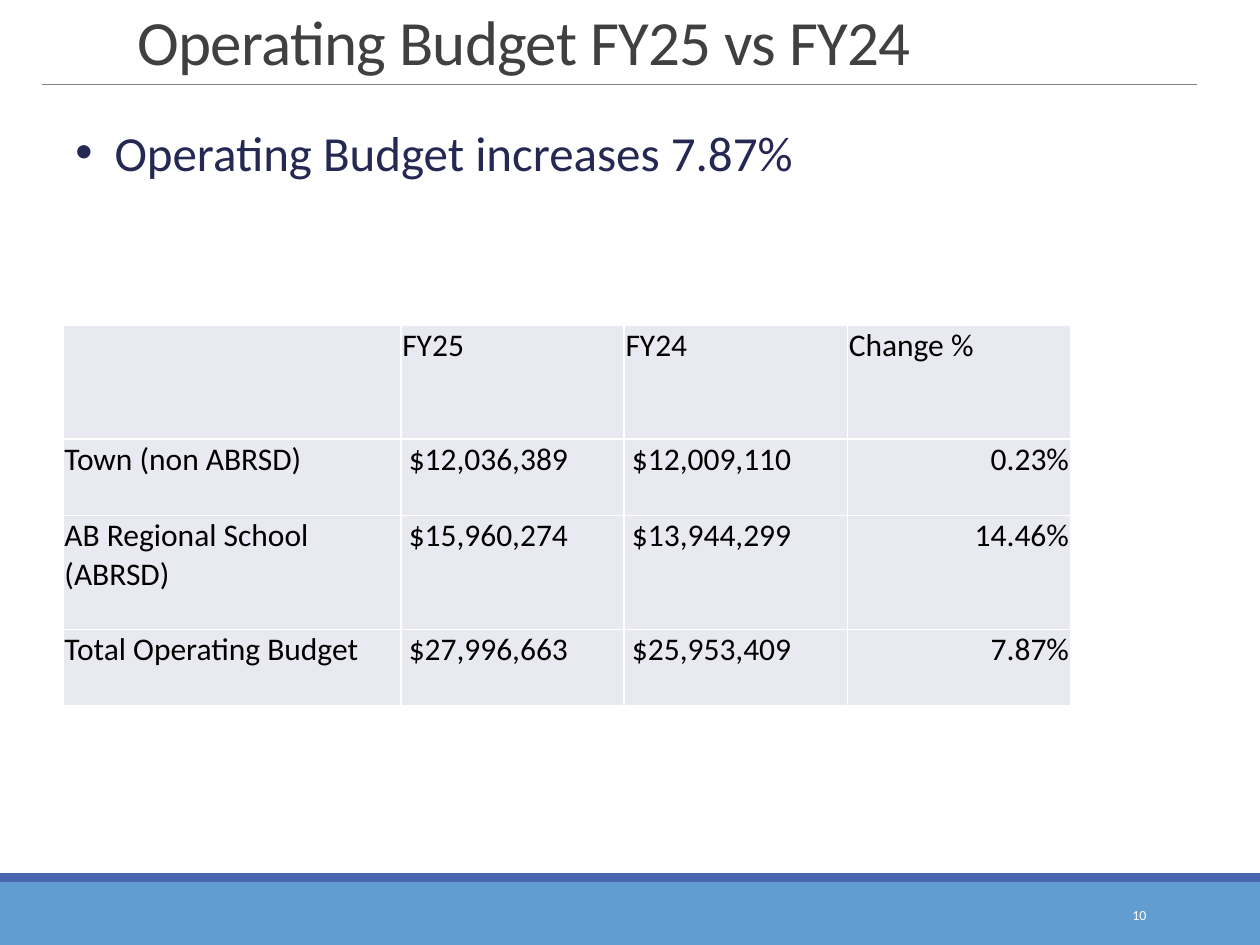
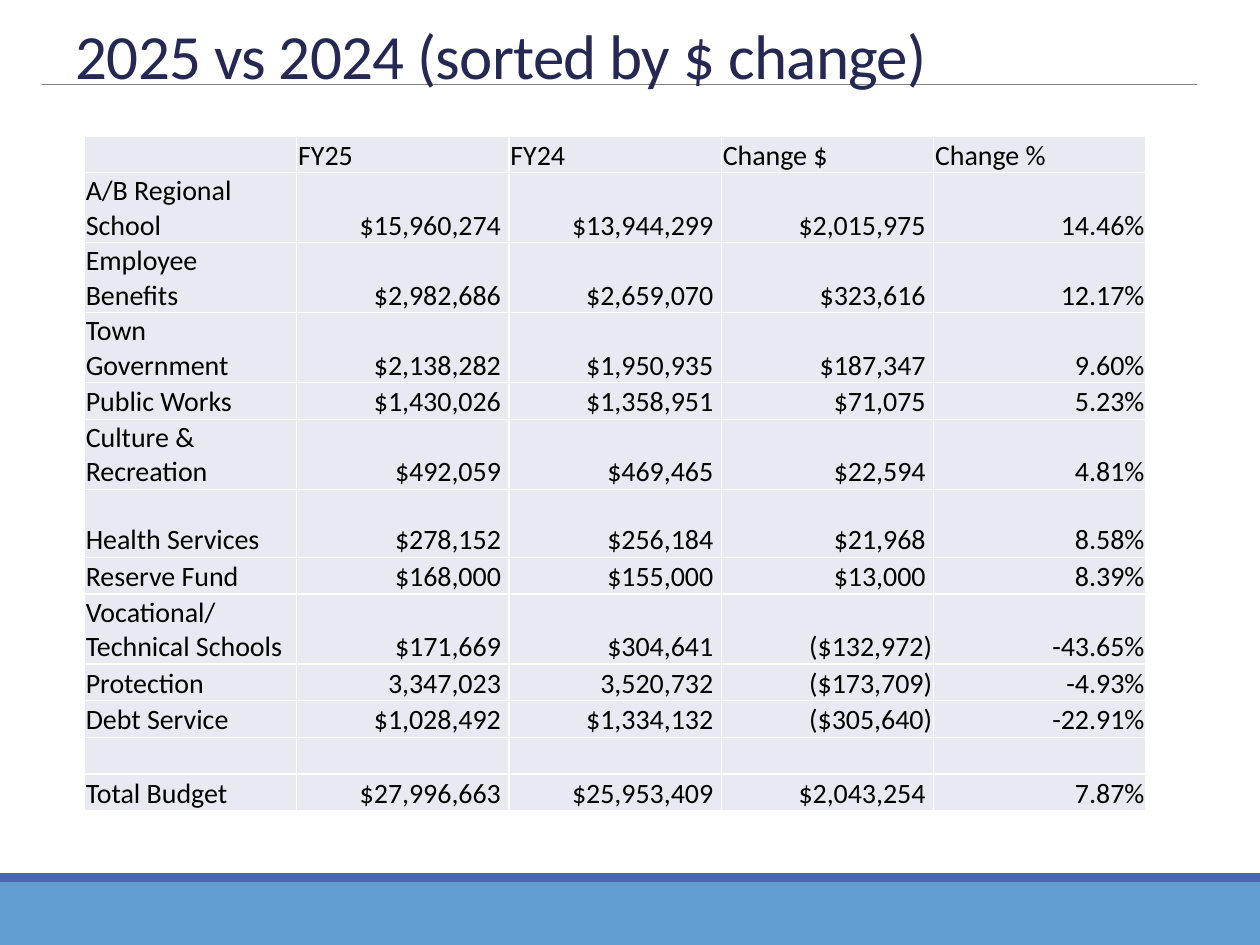
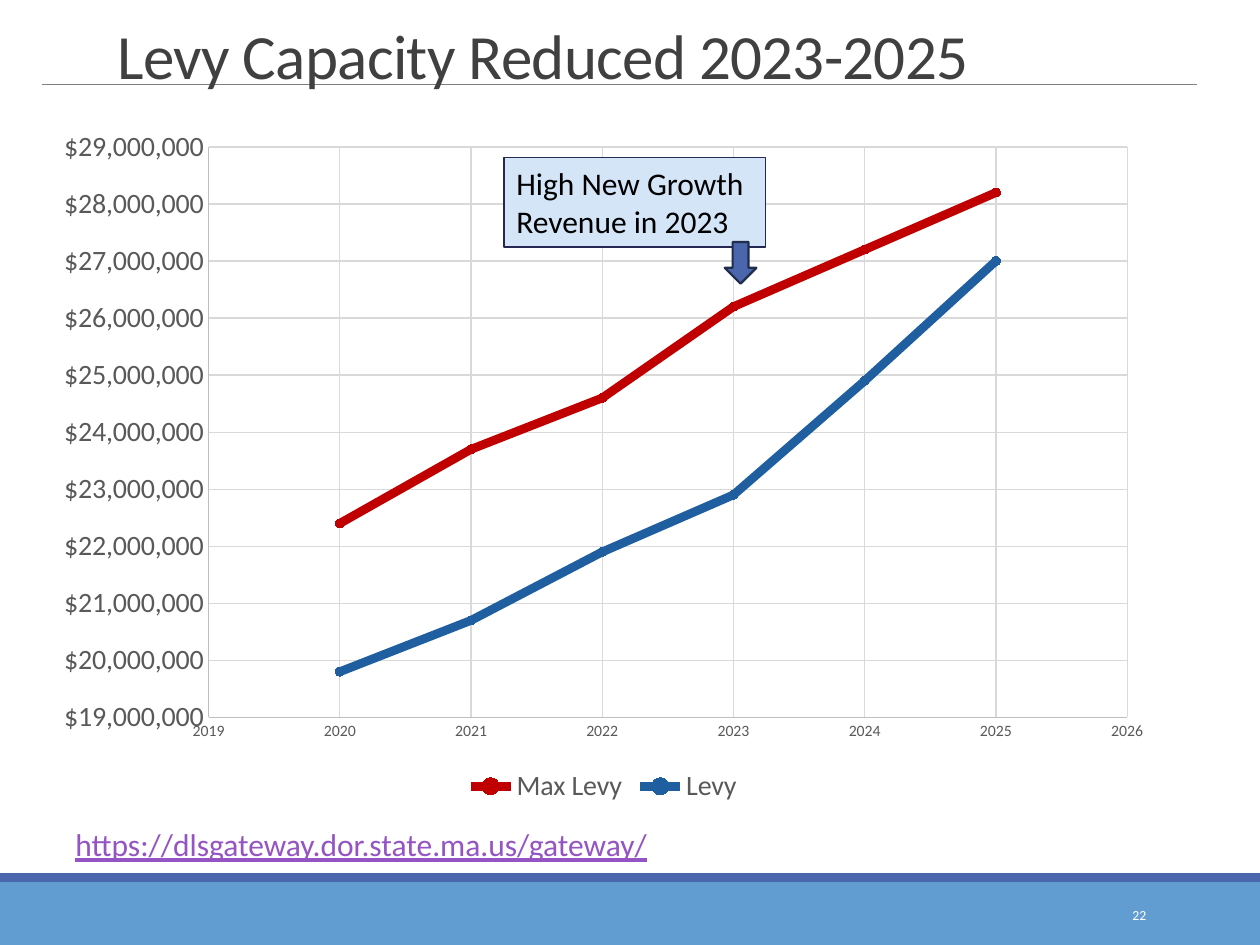
from lxml.etree import SubElement
from pptx import Presentation
from pptx.chart.data import XyChartData
from pptx.dml.color import RGBColor
from pptx.enum.chart import XL_CHART_TYPE, XL_LEGEND_POSITION, XL_MARKER_STYLE, XL_TICK_MARK
from pptx.enum.shapes import MSO_CONNECTOR, MSO_SHAPE
from pptx.enum.text import MSO_ANCHOR, PP_ALIGN
from pptx.oxml.ns import qn
from pptx.util import Cm, Pt

FONT = "Calibri"
NAVY, DARK_GRAY, TEXT_GRAY = "242852", "404040", "595959"
BLACK, WHITE = "000000", "FFFFFF"
LIGHT_BLUE, BLUE, CELL_FILL = "629DD1", "4A66AC", "E9EAF1"
AXIS_GRAY, GRID_GRAY = "BFBFBF", "D9D9D9"

# Places are left, top, width and height in centimetres.
BANDS = [((0, 17.78, 25.4, 1.27), LIGHT_BLUE), ((0, 17.6, 25.4, 0.18), BLUE)]
TITLE_RULE = (0.84, 1.7, 24.13, 1.7)
NUMBER_PLACE = (20.62, 17.93, 2.74, 1.02)

SLIDES = [
    {"title": "Operating Budget FY25 vs FY24", "place": (2.51, 0.15, 20.96, 1.52),
     "color": DARK_GRAY, "number": "10"},
    {"title": "2025 vs 2024 (sorted by $ change)", "place": (1.27, 0.43, 20.96, 1.75),
     "color": NAVY, "number": None},
    {"title": "Levy Capacity Reduced 2023-2025", "place": (2.11, 0.43, 20.96, 1.75),
     "color": DARK_GRAY, "number": "22"},
]

OPERATING_ROWS = [
    ("", "FY25", "FY24", "Change %"),
    ("Town (non ABRSD)", "$12,036,389", "$12,009,110", "0.23%"),
    ("AB Regional School (ABRSD)", "$15,960,274", "$13,944,299", "14.46%"),
    ("Total Operating Budget", "$27,996,663", "$25,953,409", "7.87%"),
]
OPERATING_FORMAT = {
    "left": 1.27, "top": 6.55, "widths": [6.81, 4.5, 4.5, 4.5],
    "heights": [2.3, 1.54, 2.3, 1.54], "size": 18, "anchor": MSO_ANCHOR.TOP,
    "amount_align": PP_ALIGN.LEFT,
}

DEPARTMENT_ROWS = [
    ("", "FY25", "FY24", "Change $", "Change %"),
    ("A/B Regional School", "$15,960,274", "$13,944,299", "$2,015,975", "14.46%"),
    ("Employee Benefits", "$2,982,686", "$2,659,070", "$323,616", "12.17%"),
    ("Town Government", "$2,138,282", "$1,950,935", "$187,347", "9.60%"),
    ("Public Works", "$1,430,026", "$1,358,951", "$71,075", "5.23%"),
    ("Culture & Recreation", "$492,059", "$469,465", "$22,594", "4.81%"),
    ("Health Services", "$278,152", "$256,184", "$21,968", "8.58%"),
    ("Reserve Fund", "$168,000", "$155,000", "$13,000", "8.39%"),
    ("Vocational/Technical Schools", "$171,669", "$304,641", "($132,972)", "-43.65%"),
    ("Protection", "3,347,023", "3,520,732", "($173,709)", "-4.93%"),
    ("Debt Service", "$1,028,492", "$1,334,132", "($305,640)", "-22.91%"),
    ("", "", "", "", ""),
    ("Total Budget", "$27,996,663", "$25,953,409", "$2,043,254", "7.87%"),
]
TALL_ROWS = {1, 2, 3, 5, 6, 8}
DEPARTMENT_FORMAT = {
    "left": 1.7, "top": 2.74, "widths": [4.28] * 5,
    "heights": [1.37 if row in TALL_ROWS else 0.74 for row in range(len(DEPARTMENT_ROWS))],
    "size": 16, "anchor": MSO_ANCHOR.BOTTOM, "amount_align": PP_ALIGN.RIGHT,
}

YEARS = range(2020, 2026)
LEVIES = [
    ("Max Levy", "C00000", [22400000, 23700000, 24600000, 26200000, 27200000, 28200000]),
    ("Levy", "1F5FA0", [19800000, 20700000, 21900000, 22900000, 24900000, 27000000]),
]
YEAR_AXIS = {"minimum_scale": 2019, "maximum_scale": 2026, "major_unit": 1}
LEVY_AXIS = {"minimum_scale": 19000000, "maximum_scale": 29000000, "major_unit": 1000000}


def color(value):
    return RGBColor.from_string(value)


def lengths(values):
    return [Cm(value) for value in values]


def set_font(font, size, fill, **extras):
    for name, value in {"name": FONT, "size": Pt(size), **extras}.items():
        setattr(font, name, value)
    font.color.rgb = color(fill)


def set_line(line, fill, width):
    line.color.rgb = color(fill)
    line.width = Pt(width)


def write(frame, text, size, fill, align=PP_ALIGN.LEFT, anchor=MSO_ANCHOR.TOP, **extras):
    frame.word_wrap = True
    frame.vertical_anchor = anchor
    paragraph = frame.paragraphs[0]
    paragraph.alignment = align
    run = paragraph.add_run()
    run.text = text
    set_font(run.font, size, fill, **extras)
    return paragraph


def add_text(slide, place, text, size, fill, **options):
    box = slide.shapes.add_textbox(*lengths(place))
    return write(box.text_frame, text, size, fill, **options)


def add_filled_shape(slide, kind, place, fill, line=None):
    shape = slide.shapes.add_shape(kind, *lengths(place))
    shape.shadow.inherit = False
    shape.fill.solid()
    shape.fill.fore_color.rgb = color(fill)
    if line:
        set_line(shape.line, *line)
    else:
        shape.line.fill.background()
    return shape


def move_shared_parts_to_layout(slide, layout):
    """Draw the bands and the title rule, then hand them to the layout."""
    for placeholder in list(layout.placeholders):
        if placeholder.placeholder_format.idx >= 10:
            layout.shapes.element.remove(placeholder.element)
    parts = [add_filled_shape(slide, MSO_SHAPE.RECTANGLE, place, fill) for place, fill in BANDS]
    rule = slide.shapes.add_connector(MSO_CONNECTOR.STRAIGHT, *lengths(TITLE_RULE))
    set_line(rule.line, "808080", 0.5)
    SubElement(rule.element.spPr, qn("a:effectLst"))
    for part in parts + [rule]:
        layout.shapes.element.append(part.element)


def add_title(slide, content):
    title = slide.shapes.title
    for name, value in zip(("left", "top", "width", "height"), lengths(content["place"])):
        setattr(title, name, value)
    paragraph = write(title.text_frame, content["title"], 36, content["color"])
    paragraph.line_spacing = 0.85
    paragraph.runs[0].font._element.set("spc", "-40")


def add_number(slide, number):
    add_text(slide, NUMBER_PLACE, number, 7.9, WHITE,
             align=PP_ALIGN.RIGHT, anchor=MSO_ANCHOR.MIDDLE)


def add_cell_borders(cell):
    properties = cell._tc.get_or_add_tcPr()
    for side in ("lnL", "lnR", "lnT", "lnB"):
        border = SubElement(properties, qn(f"a:{side}"), w=str(Pt(1)))
        fill = SubElement(border, qn("a:solidFill"))
        SubElement(fill, qn("a:srgbClr"), val=WHITE)


def fill_cell(cell, text, align, padded, layout):
    """Format one cell; padded amounts keep a small gap at their aligned side."""
    margins = {"margin_left": 0.03, "margin_right": 0.03, "margin_top": 0.03, "margin_bottom": 0}
    if padded:
        margins["margin_right" if align == PP_ALIGN.RIGHT else "margin_left"] = 0.16
    for name, value in margins.items():
        setattr(cell, name, Cm(value))
    add_cell_borders(cell)
    cell.fill.solid()
    cell.fill.fore_color.rgb = color(CELL_FILL)
    cell.vertical_anchor = layout["anchor"]
    paragraph = cell.text_frame.paragraphs[0]
    paragraph.alignment = align
    if text:
        run = paragraph.add_run()
        run.text = text
        set_font(run.font, layout["size"], BLACK)
    else:
        SubElement(paragraph._p, qn("a:endParaRPr"), sz=str(layout["size"] * 100))


def add_budget_table(slide, rows, layout):
    widths, heights = lengths(layout["widths"]), lengths(layout["heights"])
    table = slide.shapes.add_table(len(rows), len(widths), Cm(layout["left"]), Cm(layout["top"]),
                                   sum(widths), sum(heights)).table
    table.first_row = table.horz_banding = False
    for column, width in zip(table.columns, widths):
        column.width = width
    for row, height in zip(table.rows, heights):
        row.height = height
    for row_index, row in enumerate(rows):
        for column_index, text in enumerate(row):
            is_amount = row_index > 0 and column_index > 0
            align = PP_ALIGN.LEFT
            if is_amount:
                align = PP_ALIGN.RIGHT if text.endswith("%") else layout["amount_align"]
            padded = is_amount and not text.endswith(("%", ")"))
            fill_cell(table.cell(row_index, column_index), text, align, padded, layout)


def format_axis(axis, scale, size, number_format):
    for name, value in {**scale, "has_major_gridlines": True,
                        "major_tick_mark": XL_TICK_MARK.NONE,
                        "minor_tick_mark": XL_TICK_MARK.NONE}.items():
        setattr(axis, name, value)
    set_line(axis.major_gridlines.format.line, GRID_GRAY, 0.75)
    set_line(axis.format.line, AXIS_GRAY, 0.75)
    set_font(axis.tick_labels.font, size, TEXT_GRAY)
    axis.tick_labels.number_format = number_format
    axis.tick_labels.number_format_is_linked = False


def add_levy_chart(slide, place):
    data = XyChartData()
    for name, _, values in LEVIES:
        series = data.add_series(name)
        for year, value in zip(YEARS, values):
            series.add_data_point(year, value)
    chart = slide.shapes.add_chart(XL_CHART_TYPE.XY_SCATTER_LINES, *lengths(place), data).chart
    set_font(chart.font, 10, BLACK)
    chart.has_title = False
    chart.has_legend = True
    chart.legend.position = XL_LEGEND_POSITION.BOTTOM
    chart.legend.include_in_layout = False
    set_font(chart.legend.font, 16, TEXT_GRAY)
    format_axis(chart.category_axis, YEAR_AXIS, 9, "General")
    format_axis(chart.value_axis, LEVY_AXIS, 16, '"$"#,##0')
    plot = chart.plots[0]
    plot.vary_by_categories = False
    for series, (_, fill, _) in zip(plot.series, LEVIES):
        series.smooth = False
        set_line(series.format.line, fill, 5)
        marker = series.marker
        marker.style, marker.size = XL_MARKER_STYLE.CIRCLE, 5
        marker.format.fill.solid()
        marker.format.fill.fore_color.rgb = color(fill)
        set_line(marker.format.line, fill, 0.75)


def add_bullet_line(slide, place, text):
    paragraph = add_text(slide, place, text, 28, NAVY)
    paragraph.space_before = Pt(6)
    properties = paragraph._p.get_or_add_pPr()
    properties.set("marL", str(Cm(0.79)))
    properties.set("indent", str(-Cm(0.79)))
    SubElement(properties, qn("a:buFont"), typeface="Arial")
    SubElement(properties, qn("a:buChar"), char="•")


def add_growth_callout(slide):
    callout = add_filled_shape(slide, MSO_SHAPE.RECTANGLE, (10.16, 3.18, 5.28, 1.8),
                               "D4E5F7", (NAVY, 0.75))
    write(callout.text_frame, "High New Growth Revenue in 2023", 18, BLACK)
    add_filled_shape(slide, MSO_SHAPE.DOWN_ARROW, (14.61, 4.88, 0.64, 0.84),
                     BLUE, ("202D4B", 1.25))


def main():
    presentation = Presentation()
    presentation.slide_width, presentation.slide_height = Cm(25.4), Cm(19.05)
    layout = presentation.slide_layouts[5]
    slides = [presentation.slides.add_slide(layout) for _ in SLIDES]
    move_shared_parts_to_layout(slides[0], layout)
    for slide, content in zip(slides, SLIDES):
        add_title(slide, content)
        if content["number"]:
            add_number(slide, content["number"])

    operating, departments, levy = slides
    add_bullet_line(operating, (1.27, 2.34, 22.86, 1.45), "Operating Budget increases 7.87%")
    add_budget_table(operating, OPERATING_ROWS, OPERATING_FORMAT)
    add_budget_table(departments, DEPARTMENT_ROWS, DEPARTMENT_FORMAT)
    add_levy_chart(levy, (0.84, 2.34, 22.66, 13.97))
    add_text(levy, (1.27, 16.51, 12.27, 1.02), "https://dlsgateway.dor.state.ma.us/gateway/",
             18, "9454C3", underline=True)
    add_growth_callout(levy)
    presentation.save("out.pptx")


if __name__ == "__main__":
    main()
